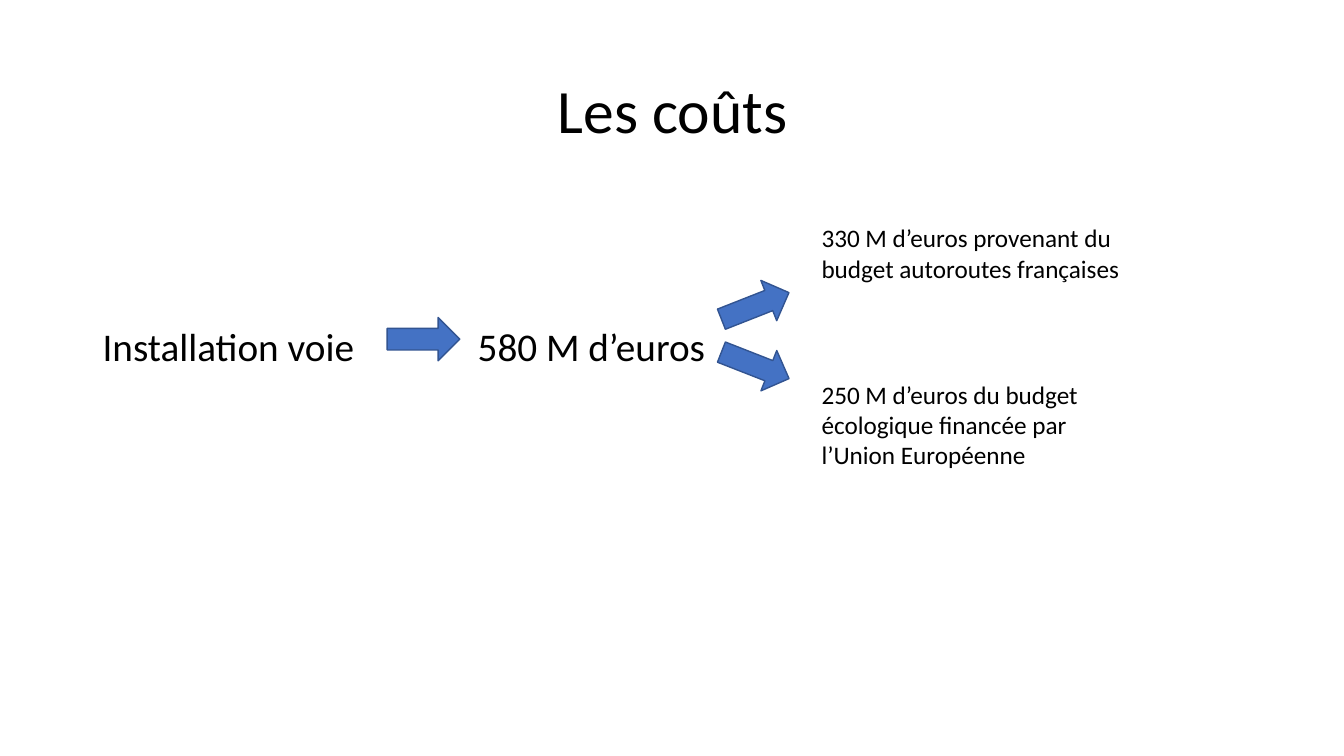
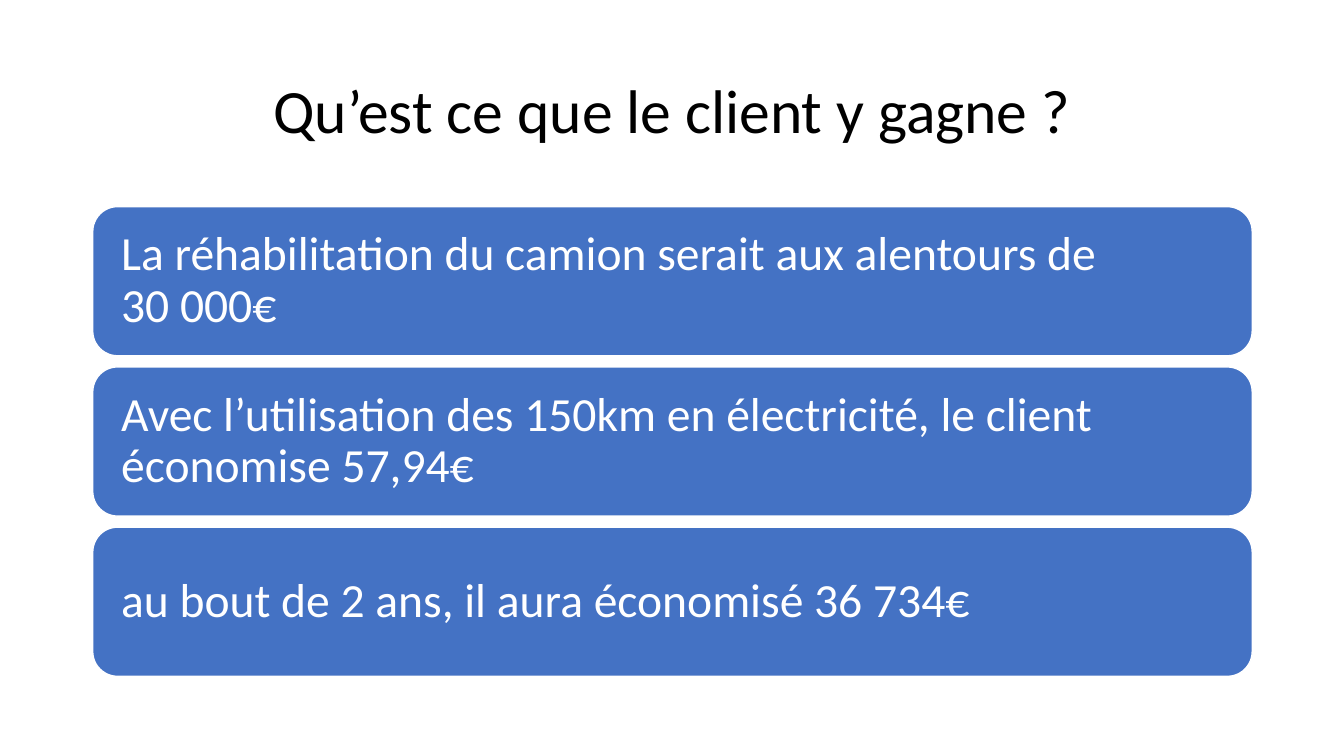
"""Build two slides: the funding of the road and what the customer gains."""
from pptx import Presentation
from pptx.dml.color import RGBColor
from pptx.enum.shapes import MSO_SHAPE
from pptx.enum.text import MSO_ANCHOR, MSO_AUTO_SIZE, PP_ALIGN
from pptx.util import Emu, Pt

PIXEL = 9144
FONT = "Calibri"
BLACK, WHITE, BLUE, DARK_BLUE = "000000", "FFFFFF", "4472C4", "325491"
LEFT, WIDTH = 92, 1150

COST_TITLE = "Les coûts"
COST_LABELS = [
    ("Installation voie", 28, (LEFT, 315, 290, 52)),
    ("580 M d’euros", 28, (464, 315, 260, 52)),
    ("330 M d’euros provenant du budget autoroutes françaises", 18, (805, 216, 354, 71)),
    ("250 M d’euros du budget écologique financée par l’Union Européenne", 18,
     (805, 371, 317, 101)),
]
ARROW_SIZE = (72, 43)
ARROWS = [(384, 315, 0), (713, 282, -21.5), (713, 341, 21.4)]

GAIN_TITLE = "Qu’est ce que le client y gagne ?"
GAINS = [
    ("La réhabilitation du camion serait aux alentours de", "30 000€"),
    ("Avec l’utilisation des 150km en électricité, le client économise 57,94€",),
    ("au bout de 2 ans, il aura économisé 36 734€",),
]
CARD_TOP, CARD_HEIGHT, CARD_STEP, CARD_INSET = 205, 148, 159, 21


def px(*lengths):
    return [Emu(length * PIXEL) for length in lengths]


def color(value):
    return RGBColor.from_string(value)


def format_paragraph(paragraph, size, font_color, align=PP_ALIGN.LEFT, spacing=1.0):
    paragraph.alignment = align
    paragraph.line_spacing = spacing
    paragraph.font.name = FONT
    paragraph.font.size = Pt(size)
    paragraph.font.color.rgb = color(font_color)


def add_slide(presentation, text):
    slide = presentation.slides.add_slide(presentation.slide_layouts[5])
    title = slide.shapes.title
    title.left, title.top, title.width, title.height = px(LEFT, 40, WIDTH, 145)
    frame = title.text_frame
    frame.text = text
    frame.auto_size = MSO_AUTO_SIZE.NONE
    frame.vertical_anchor = MSO_ANCHOR.MIDDLE
    format_paragraph(frame.paragraphs[0], 44, BLACK, PP_ALIGN.CENTER, 0.9)
    return slide


def add_label(slide, text, size, box):
    frame = slide.shapes.add_textbox(*px(*box)).text_frame
    frame.word_wrap = True
    frame.text = text
    format_paragraph(frame.paragraphs[0], size, BLACK)


def add_filled_shape(slide, kind, box, line_color):
    shape = slide.shapes.add_shape(kind, *px(*box))
    shape.shadow.inherit = False
    shape.fill.solid()
    shape.fill.fore_color.rgb = color(BLUE)
    shape.line.color.rgb = color(line_color)
    shape.line.width = Pt(1)
    return shape


def add_card(slide, lines, top):
    box = (LEFT, top, WIDTH, CARD_HEIGHT)
    card = add_filled_shape(slide, MSO_SHAPE.ROUNDED_RECTANGLE, box, WHITE)
    frame = card.text_frame
    frame.word_wrap = True
    frame.vertical_anchor = MSO_ANCHOR.MIDDLE
    (frame.margin_left, frame.margin_top,
     frame.margin_right, frame.margin_bottom) = px(*[CARD_INSET] * 4)
    paragraph = frame.paragraphs[0]
    for index, line in enumerate(lines):
        if index:
            paragraph.add_line_break()
        paragraph.add_run().text = line
    format_paragraph(paragraph, 34, WHITE, spacing=0.9)


def main():
    presentation = Presentation()
    presentation.slide_width, presentation.slide_height = px(1333, 750)

    costs = add_slide(presentation, COST_TITLE)
    for text, size, box in COST_LABELS:
        add_label(costs, text, size, box)
    for left, top, rotation in ARROWS:
        arrow = add_filled_shape(costs, MSO_SHAPE.RIGHT_ARROW, (left, top, *ARROW_SIZE), DARK_BLUE)
        arrow.rotation = rotation

    gains = add_slide(presentation, GAIN_TITLE)
    for index, lines in enumerate(GAINS):
        add_card(gains, lines, CARD_TOP + index * CARD_STEP)

    presentation.save("out.pptx")


if __name__ == "__main__":
    main()
